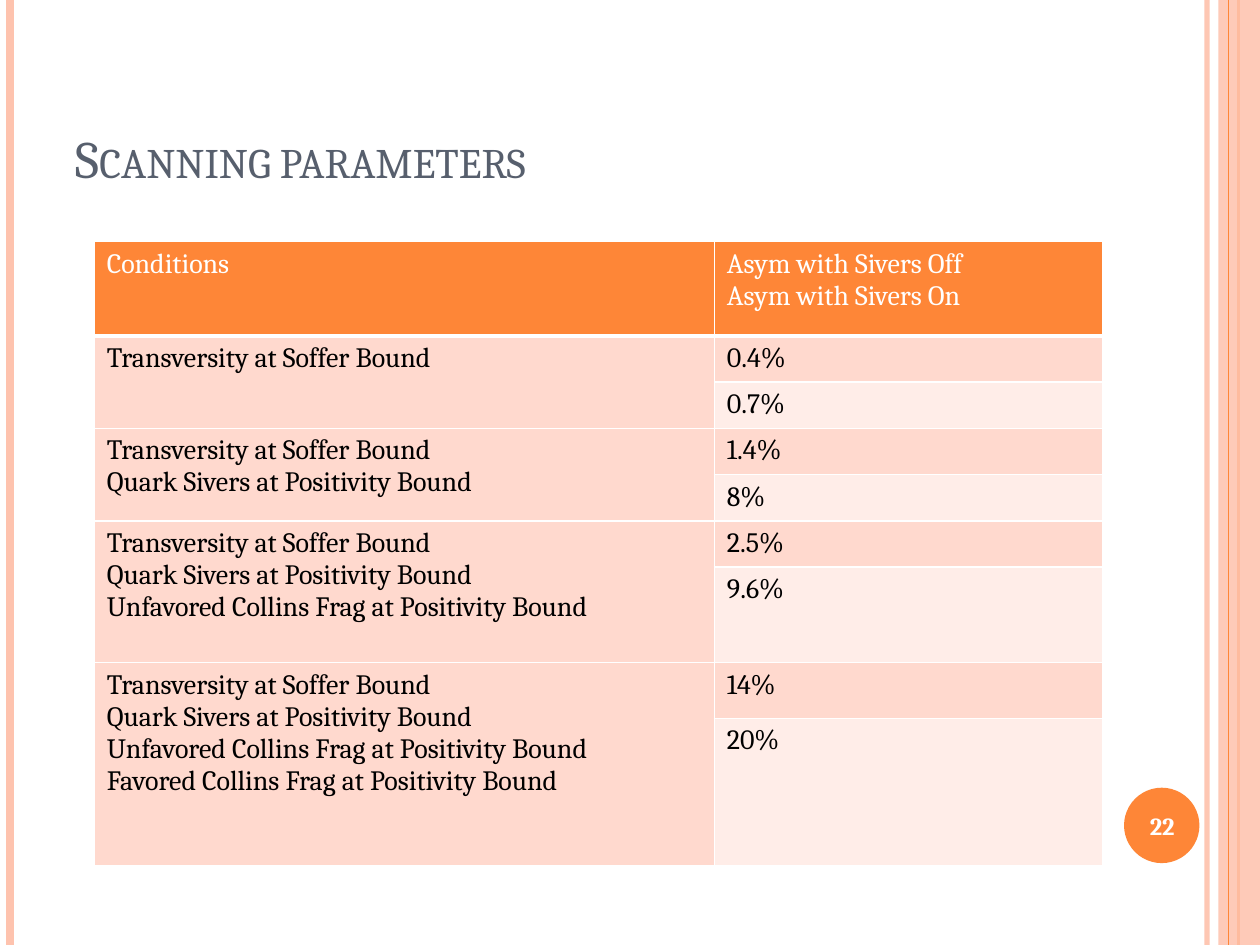
from dataclasses import dataclass

from lxml.etree import SubElement
from pptx import Presentation
from pptx.dml.color import RGBColor
from pptx.enum.shapes import MSO_CONNECTOR, MSO_SHAPE
from pptx.enum.text import MSO_ANCHOR, MSO_AUTO_SIZE, PP_ALIGN
from pptx.oxml.ns import qn
from pptx.util import Cm, Pt


@dataclass(frozen=True)
class Theme:
    font: str = "Cambria"
    accent: str = "FE8637"
    pale: str = "FEC3AE"
    band_dark: str = "FFD9CE"
    band_light: str = "FFEDE8"
    title: str = "575F6D"
    text: str = "000000"
    white: str = "FFFFFF"
    title_size: int = 30
    table_size: int = 16
    number_size: int = 14


THEME = Theme()
WIDTH, HEIGHT = 25.4, 19.05

BOUNDS = [
    "Transversity at Soffer Bound",
    "Quark Sivers at Positivity Bound",
    "Unfavored Collins Frag at Positivity Bound",
    "Favored Collins Frag at Positivity Bound",
]
HEADER = ["Conditions", "Asym with Sivers Off\nAsym with Sivers On"]
# Each scan adds one more bound: asymmetry with Sivers off, then on
ASYMMETRIES = [("0.4%", "0.7%"), ("1.4%", "8%"), ("2.5%", "9.6%"), ("14%", "20%")]
COL_WIDTHS = [12.5, 7.82]
ROW_HEIGHTS = [1.9, 0.9, 0.9, 0.9, 0.9, 0.9, 1.93, 1.12, 2.97]


def rgb(color):
    return RGBColor.from_string(color)


def format_text(tf, size, color, bold=False):
    for p in tf.paragraphs:
        for r in p.runs:
            r.font.name = THEME.font
            r.font.size = Pt(size)
            r.font.bold = bold
            r.font.color.rgb = rgb(color)


def set_alpha(sp, percent):
    color = next(sp._element.spPr.iter(qn("a:srgbClr")))
    SubElement(color, qn("a:alpha")).set("val", str(percent * 1000))


def add_rule(slide, x, top, height, color, weight):
    line = slide.shapes.add_connector(
        MSO_CONNECTOR.STRAIGHT, Cm(x), Cm(top), Cm(x), Cm(top + height))
    line.line.color.rgb = rgb(color)
    line.line.width = Pt(weight)
    SubElement(line._element.spPr, qn("a:effectLst"))
    return line


def add_plain_shape(slide, kind, left, top, width, height, color):
    sp = slide.shapes.add_shape(kind, Cm(left), Cm(top), Cm(width), Cm(height))
    sp.shadow.inherit = False
    sp.fill.solid()
    sp.fill.fore_color.rgb = rgb(color)
    sp.line.fill.background()
    return sp


def add_side_stripes(slide, left, top, width, height):
    right = left + width
    set_alpha(add_rule(slide, right - 1.07, top, height, THEME.pale, 3), 93)
    add_rule(slide, left + 0.2, top, height, THEME.pale, 4.5)
    add_rule(slide, right - 0.43, top, height, THEME.accent, 1.5)
    band = add_plain_shape(
        slide, MSO_SHAPE.RECTANGLE, right - 0.84, top, 0.84, height, THEME.pale)
    set_alpha(band, 87)
    add_rule(slide, right - 0.64, top, height, THEME.accent, 0.75)


def add_title(slide, left, top, width, height):
    title = slide.shapes.title
    title.left, title.top = Cm(left), Cm(top)
    title.width, title.height = Cm(width), Cm(height)
    tf = title.text_frame
    tf.text = "Scanning parameters"
    tf.auto_size = MSO_AUTO_SIZE.NONE
    tf.vertical_anchor = MSO_ANCHOR.BOTTOM
    p = tf.paragraphs[0]
    p.alignment = PP_ALIGN.LEFT
    format_text(tf, THEME.title_size, THEME.title)
    p.runs[0]._r.get_or_add_rPr().set("cap", "small")


def set_borders(cell, bottom):
    tc_pr = cell._tc.get_or_add_tcPr()
    widths = {"lnL": 1, "lnR": 1, "lnT": 1, "lnB": bottom}
    for i, (side, weight) in enumerate(widths.items()):
        ln = SubElement(tc_pr, qn(f"a:{side}"), w=str(Pt(weight)))
        fill = SubElement(ln, qn("a:solidFill"))
        SubElement(fill, qn("a:srgbClr"), val=THEME.white)
        tc_pr.insert(i, ln)  # borders come before the fill


def style_cell(cell, text, fill, color=THEME.text, bottom=1):
    cell.text_frame.text = text
    format_text(cell.text_frame, THEME.table_size, color)
    cell.fill.solid()
    cell.fill.fore_color.rgb = rgb(fill)
    set_borders(cell, bottom)


def add_scan_table(slide, left, top):
    frame = slide.shapes.add_table(
        len(ROW_HEIGHTS), len(COL_WIDTHS), Cm(left), Cm(top),
        Cm(sum(COL_WIDTHS)), Cm(sum(ROW_HEIGHTS)))
    table = frame.table
    for column, width in zip(table.columns, COL_WIDTHS):
        column.width = Cm(width)
    for row, height in zip(table.rows, ROW_HEIGHTS):
        row.height = Cm(height)

    for col, text in enumerate(HEADER):
        style_cell(table.cell(0, col), text, THEME.accent, THEME.white, bottom=3)

    # Two rows per scan, with the conditions merged across both
    for i, (off, on) in enumerate(ASYMMETRIES):
        row = 2 * i + 1
        conditions, below = table.cell(row, 0), table.cell(row + 1, 0)
        style_cell(conditions, "\n".join(BOUNDS[:i + 1]), THEME.band_dark)
        style_cell(below, "", THEME.band_dark)
        conditions.merge(below)
        style_cell(table.cell(row, 1), off, THEME.band_dark)
        style_cell(table.cell(row + 1, 1), on, THEME.band_light)


def add_page_number(slide, left, top, size):
    add_plain_shape(slide, MSO_SHAPE.OVAL, left, top, size, size, THEME.accent)
    box = slide.shapes.add_textbox(
        Cm(left - 0.08), Cm(top + 0.05), Cm(size + 0.18), Cm(size - 0.07))
    tf = box.text_frame
    tf.word_wrap = True
    tf.vertical_anchor = MSO_ANCHOR.MIDDLE
    tf.text = "22"
    tf.paragraphs[0].alignment = PP_ALIGN.CENTER
    format_text(tf, THEME.number_size, THEME.white, bold=True)


def main():
    prs = Presentation()
    prs.slide_width, prs.slide_height = Cm(WIDTH), Cm(HEIGHT)
    slide = prs.slides.add_slide(prs.slide_layouts[5])
    add_side_stripes(slide, 0, 0, WIDTH, HEIGHT)
    add_page_number(slide, 22.66, 15.88, 1.52)
    add_title(slide, 1.27, 0.76, 20.75, 3.18)
    add_scan_table(slide, 1.9, 4.87)
    prs.save("out.pptx")


if __name__ == "__main__":
    main()
